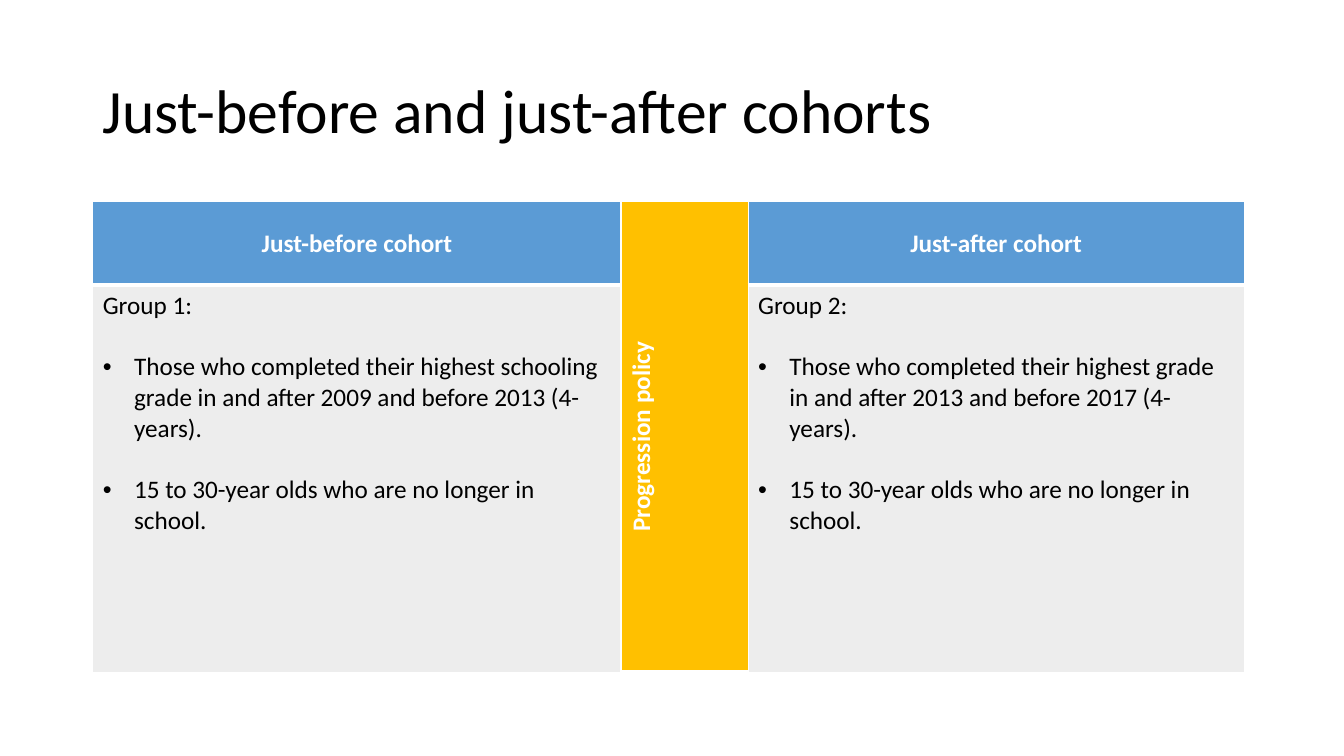
"""Build a slide that compares the just-before and just-after cohorts."""
from lxml import etree
from pptx import Presentation, util as u
from pptx.dml.color import RGBColor
from pptx.enum import text
from pptx.oxml import ns

COLOURS = {"black": "000000", "white": "FFFFFF", "blue": "5B9BD5",
           "gold": "FFC000", "grey": "EDEDED"}


class CohortSlide:
    """Hold the style and the current slide."""

    def __init__(self, page, font="Calibri", size=18):
        self.page, self.font, self.size = page, font, size

    def style(self, paragraph, colour, size=None, bold=False):
        font = paragraph.font
        font.name, font.size, font.bold = self.font, u.Pt(size or self.size), bold
        font.color.rgb = RGBColor.from_string(COLOURS[colour])

    def title(self, wording):
        box = self.page.shapes.add_textbox(
            u.Inches(0.92), u.Inches(0.4), u.Inches(11.5), u.Inches(1.45))
        frame = box.text_frame
        frame.word_wrap = True
        frame.vertical_anchor = text.MSO_ANCHOR.MIDDLE
        para = frame.paragraphs[0]
        para.text = wording
        para.line_spacing = 0.9
        self.style(para, "black", 44)

    def table(self, columns, rows):
        frame = self.page.shapes.add_table(
            len(rows), len(columns), u.Inches(0.92), u.Inches(2),
            u.Inches(sum(columns)), u.Inches(sum(rows)))
        for column, width in zip(frame.table.columns, columns):
            column.width = u.Inches(width)
        for row, height in zip(frame.table.rows, rows):
            row.height = u.Inches(height)
        return frame.table

    def paint(self, cell, colour, bottom=1):
        cell.fill.solid()
        cell.fill.fore_color.rgb = RGBColor.from_string(COLOURS[colour])
        properties = cell._tc.get_or_add_tcPr()
        for index, (side, width) in enumerate(zip("LRTB", (1, 1, 1, bottom))):
            line = etree.Element(ns.qn(f"a:ln{side}"), w=str(u.Pt(width)))
            fill = etree.SubElement(line, ns.qn("a:solidFill"))
            etree.SubElement(fill, ns.qn("a:srgbClr"), val=COLOURS["white"])
            properties.insert(index, line)

    def heading(self, cell, wording, colour):
        self.paint(cell, colour, bottom=3)
        cell.vertical_anchor = text.MSO_ANCHOR.MIDDLE
        para = cell.text_frame.paragraphs[0]
        para.text = wording
        para.alignment = text.PP_ALIGN.CENTER
        self.style(para, "white", bold=True)

    def divider(self, top, bottom, wording):
        self.heading(top, wording, "gold")
        self.paint(bottom, "gold", bottom=3)
        top.merge(bottom)
        top._tc.get_or_add_tcPr().set("vert", "vert270")

    def group(self, cell, label, points):
        self.paint(cell, "grey")
        para = cell.text_frame.paragraphs[0]
        para.text = label
        self.style(para, "black")
        for point in points:
            para = cell.text_frame.add_paragraph()
            para.text = point
            para.space_before = u.Pt(22)
            self.bullet(para)
            self.style(para, "black")

    def bullet(self, para):
        properties = para._p.get_or_add_pPr()
        properties.set("marL", str(u.Inches(0.31)))
        properties.set("indent", str(u.Inches(-0.31)))
        etree.SubElement(properties, ns.qn("a:buFont"), typeface="Arial")
        etree.SubElement(properties, ns.qn("a:buChar"), char="•")


def main():
    deck = Presentation()
    deck.slide_width, deck.slide_height = u.Inches(13.33), u.Inches(7.5)
    slide = CohortSlide(deck.slides.add_slide(deck.slide_layouts[6]))
    slide.title("Just-before and just-after cohorts")
    table = slide.table((5.24, 1.26, 4.92), (0.83, 3.84))
    leavers = "15 to 30-year olds who are no longer in school."
    cohorts = (
        (0, "Just-before cohort", "Group 1:",
         "Those who completed their highest schooling grade in and after 2009 "
         "and before 2013 (4-years)."),
        (2, "Just-after cohort", "Group 2:",
         "Those who completed their highest grade in and after 2013 "
         "and before 2017 (4-years)."),
    )
    for column, heading, label, completed in cohorts:
        slide.heading(table.cell(0, column), heading, "blue")
        slide.group(table.cell(1, column), label, (completed, leavers))
    slide.divider(table.cell(0, 1), table.cell(1, 1), "Progression policy")
    deck.save("out.pptx")


if __name__ == "__main__":
    main()
